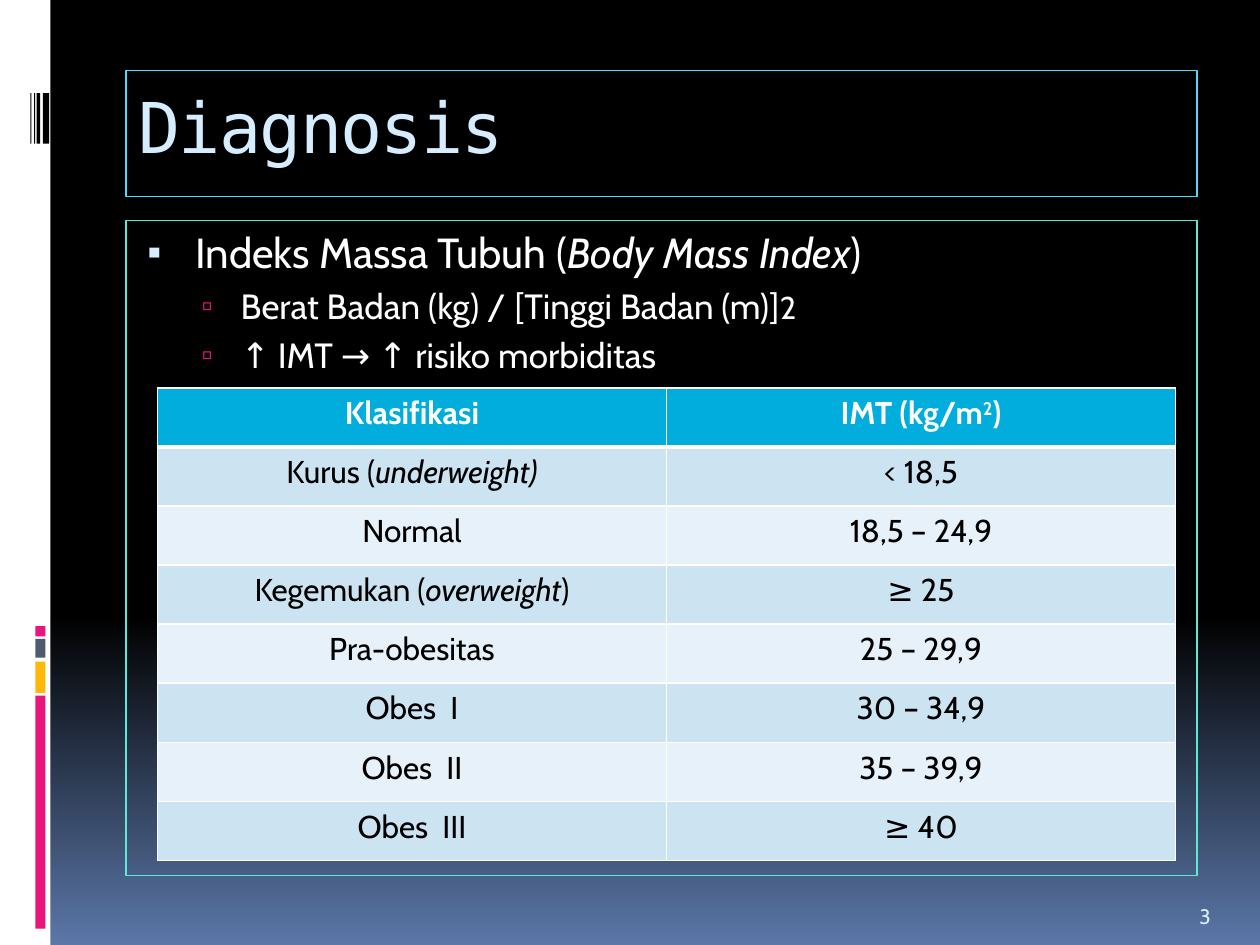
from lxml import etree
from pptx import Presentation, util as u
from pptx.dml.color import RGBColor
from pptx.enum import shapes, text
from pptx.oxml import ns

FONT = "Cabin"
WHITE, BLACK, PALE, PINK = "FFFFFF", "000000", "D6ECFF", "EA157A"


def color(code):
    return RGBColor.from_string(code)


def node(parent, tag, **attrs):
    return etree.SubElement(parent, ns.qn("a:" + tag), attrs)


class Deck:
    def __init__(self, pres):
        self.slide = pres.slides.add_slide(pres.slide_layouts[1])

    def back(self, start, end, stop):
        fill = self.slide.background.fill
        fill.gradient()
        fill.gradient_angle = 270
        for part, code, spot in zip(fill.gradient_stops, (start, end), (stop, 1)):
            part.color.rgb = color(code)
            part.position = spot

    def place(self, shape, box):
        shape.left, shape.top, shape.width, shape.height = map(u.Inches, box)

    def bar(self, box, code):
        bar = self.slide.shapes.add_shape(shapes.MSO_SHAPE.RECTANGLE, *map(u.Inches, box))
        bar.shadow.inherit = False
        bar.fill.solid()
        bar.fill.fore_color.rgb = color(code)
        bar.line.fill.background()

    def style(self, para, size, code, face=FONT, bold=False):
        font = para.font
        font.size, font.name, font.bold = u.Pt(size), face, bold
        font.color.rgb = color(code)

    def runs(self, para, parts):
        for part in parts:
            words, look = part if isinstance(part, tuple) else (part, {})
            run = para.add_run()
            run.text = words
            for key, value in look.items():
                if key == "base":
                    run.font._element.set("baseline", value)
                else:
                    setattr(run.font, key, value)

    def frame(self, shape, box, edge):
        self.place(shape, box)
        shape.line.color.rgb = color(edge)
        shape.line.width = u.Pt(0.75)
        body = shape.text_frame
        body.auto_size = text.MSO_AUTO_SIZE.NONE
        body.vertical_anchor = text.MSO_ANCHOR.TOP
        return body

    def title(self, words, box, edge):
        body = self.frame(self.slide.shapes.title, box, edge)
        body.margin_top = u.Inches(0.1)
        para = body.paragraphs[0]
        para.alignment = text.PP_ALIGN.LEFT
        self.style(para, 40, PALE, "DejaVu Sans Mono")
        self.runs(para, [words])
        para.runs[0].font._element.set("spc", "-100")

    def bullets(self, items, box, edge):
        body = self.frame(self.slide.placeholders[1], box, edge)
        looks = [(0.45, -0.38, "▪", PALE, "95000", 24), (0.81, -0.31, "▫", PINK, "90000", 20)]
        for n, (level, parts) in enumerate(items):
            para = body.add_paragraph() if n else body.paragraphs[0]
            left, hang, mark, code, scale, size = looks[level]
            para.level = level
            if not level:
                para.space_before = u.Pt(7)
            props = para._p.get_or_add_pPr()
            props.set("marL", str(u.Inches(left)))
            props.set("indent", str(u.Inches(hang)))
            node(node(props, "buClr"), "srgbClr", val=code)
            node(props, "buSzPct", val=scale)
            node(props, "buChar", char=mark)
            self.style(para, size, WHITE)
            self.runs(para, parts)

    def border(self, cell, row):
        props = cell._tc.get_or_add_tcPr()
        for side in "LRTB":
            thick = (row, side) in ((0, "B"), (1, "T"))
            line = node(props, "ln" + side, w=str(u.Pt(3 if thick else 1)))
            node(node(line, "solidFill"), "srgbClr", val=WHITE)

    def table(self, rows, box):
        grid = self.slide.shapes.add_table(len(rows), len(rows[0]), *map(u.Inches, box)).table
        for r, row in enumerate(rows):
            for c, parts in enumerate(row):
                cell = grid.cell(r, c)
                self.border(cell, r)
                cell.fill.solid()
                shade = ("E7F1F9", "CCE3F2")[r % 2] if r else "00ADDC"
                cell.fill.fore_color.rgb = color(shade)
                para = cell.text_frame.paragraphs[0]
                para.alignment = text.PP_ALIGN.CENTER
                self.style(para, 18, BLACK if r else WHITE, bold=not r)
                self.runs(para, parts)

    def number(self, words, box):
        body = self.slide.shapes.add_textbox(*map(u.Inches, box)).text_frame
        body.word_wrap = True
        body.vertical_anchor = text.MSO_ANCHOR.BOTTOM
        self.style(body.paragraphs[0], 12, PALE)
        self.runs(body.paragraphs[0], [words])


def main():
    pres = Presentation()
    pres.slide_width, pres.slide_height = u.Inches(10), u.Inches(7.5)
    deck = Deck(pres)
    deck.back(BLACK, "5B77A8", 0.65)
    deck.bar((0, 0, 0.4, 7.5), WHITE)
    for top, high, code in [(5.52, 1.85, PINK), (5.25, 0.25, "FEB80A"),
                            (5.07, 0.15, "4E5B6F"), (4.97, 0.08, PINK)]:
        deck.bar((0.28, top, 0.08, high), code)
    for left, wide in [(0.34, 0.05), (0.29, 0.03), (0.27, 0.01), (0.24, 0.01)]:
        deck.bar((left, 0.74, wide, 0.4), BLACK)

    slant, lato = {"italic": True}, {"name": "Lato"}
    deck.title("Diagnosis", (1, 0.56, 8.5, 1), "51DAFF")
    deck.bullets([
        (0, ["Indeks Massa Tubuh (", ("Body Mass Index", slant), ")"]),
        (1, ["Berat Badan (kg) / ", ("[", lato), "Tinggi Badan (m)", ("]", lato),
             ("2", {"size": u.Pt(18)})]),
        (1, ["↑ IMT → ↑ risiko morbiditas"]),
    ], (1, 1.75, 8.5, 5.2), "5FE8D6")
    deck.table([
        (["Klasifikasi"], ["IMT (kg/m", ("2", {"base": "30000"}), ")"]),
        (["Kurus (", ("underweight)", slant)], ["< 18,5"]),
        (["Normal"], ["18,5 – 24,9"]),
        (["Kegemukan (", ("overweight", slant), ")"], ["≥ 25"]),
        (["Pra-obesitas"], ["25 – 29,9"]),
        (["Obes  I"], ["30 – 34,9"]),
        (["Obes  II"], ["35 – 39,9"]),
        (["Obes  III"], ["≥ 40"]),
    ], (1.25, 3.08, 8.08, 3.75))
    deck.number("3", (9.42, 7.02, 0.5, 0.4))
    pres.save("out.pptx")


if __name__ == "__main__":
    main()
